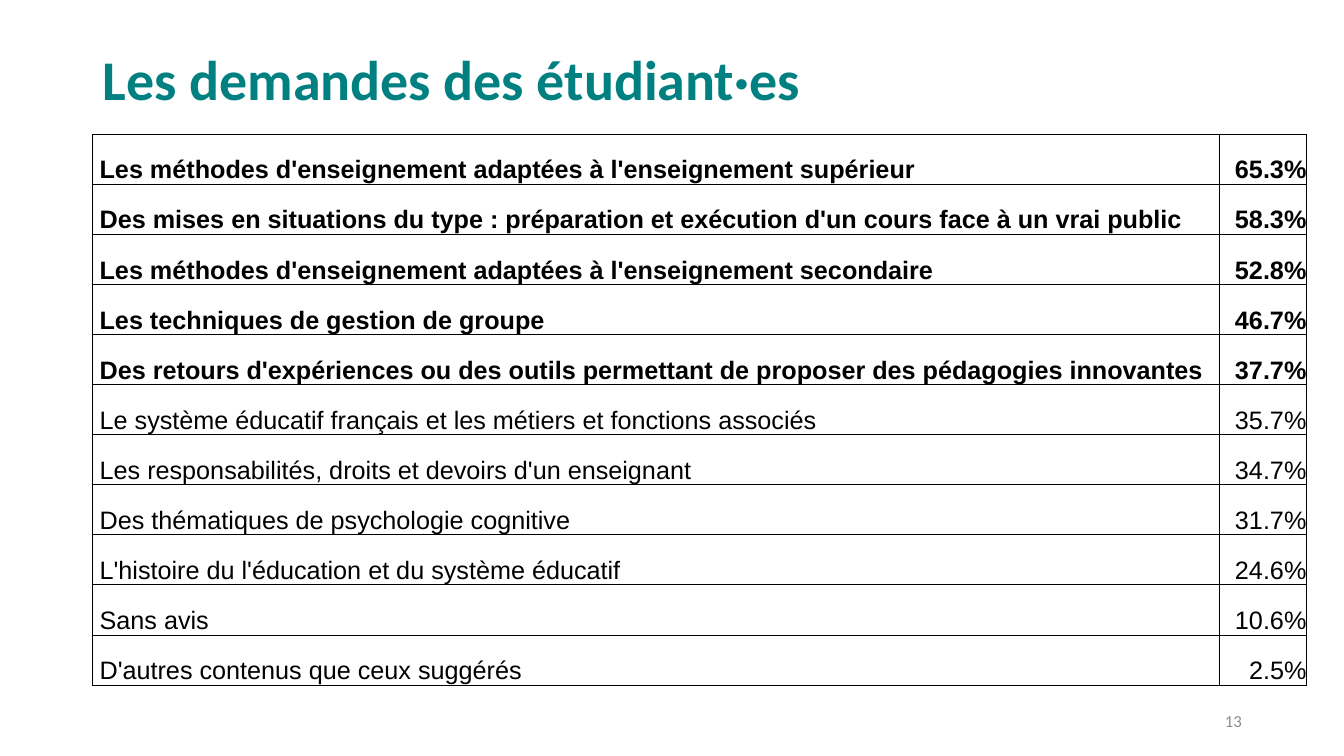
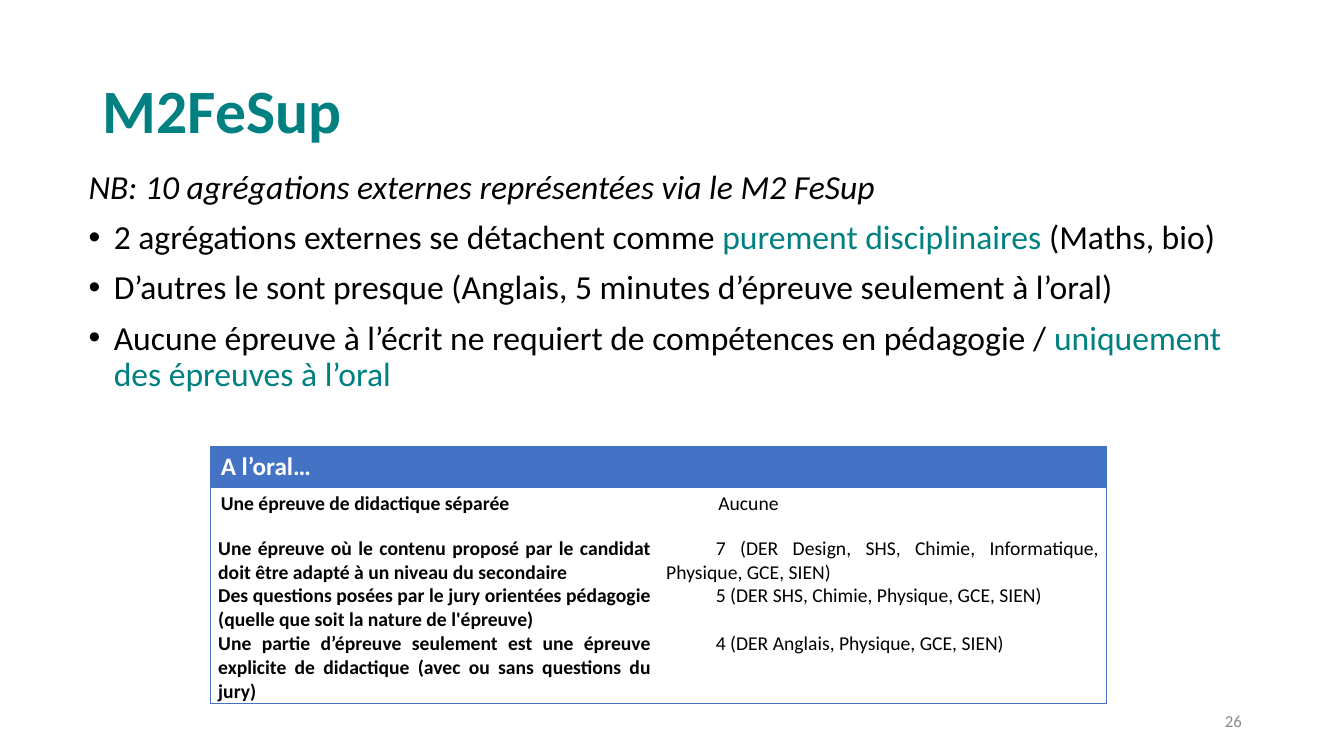
from dataclasses import dataclass

from lxml import etree
from pptx import Presentation
from pptx.dml.color import RGBColor
from pptx.enum.text import MSO_ANCHOR, MSO_AUTO_SIZE, PP_ALIGN
from pptx.oxml.ns import qn
from pptx.util import Pt

LEFT, RIGHT, JUSTIFY = PP_ALIGN.LEFT, PP_ALIGN.RIGHT, PP_ALIGN.JUSTIFY
TOP, MIDDLE, BOTTOM = MSO_ANCHOR.TOP, MSO_ANCHOR.MIDDLE, MSO_ANCHOR.BOTTOM
TITLE_ONLY = 5
COLORS = {
    "teal": "008080",
    "black": "000000",
    "white": "FFFFFF",
    "gray": "8C8C8C",
    "blue": "4472C4",
}


@dataclass(frozen=True)
class Span:
    text: str
    color: str = "black"


@dataclass(frozen=True)
class Para:
    spans: tuple[Span, ...]
    bullet: bool = True


@dataclass(frozen=True)
class Demand:
    label: str
    share: str
    bold: bool = False


@dataclass(frozen=True)
class Exam:
    label: str
    answer: str
    height: float


@dataclass(frozen=True)
class CellStyle:
    size: float
    font: str = "Calibri"
    color: str = "black"
    bold: bool = False
    align: PP_ALIGN = LEFT
    anchor: MSO_ANCHOR = TOP
    margins: tuple[float, float, float, float] = (7.2, 3.6, 7.2, 3.6)
    indent: float = 0
    fill: str = "white"
    line: str = "black"
    line_width: float = 0.5


DEMANDS = (
    Demand("Les méthodes d'enseignement adaptées à l'enseignement supérieur", "65.3%", True),
    Demand("Des mises en situations du type : préparation et exécution d'un cours face à un vrai public", "58.3%", True),
    Demand("Les méthodes d'enseignement adaptées à l'enseignement secondaire", "52.8%", True),
    Demand("Les techniques de gestion de groupe", "46.7%", True),
    Demand("Des retours d'expériences ou des outils permettant de proposer des pédagogies innovantes", "37.7%", True),
    Demand("Le système éducatif français et les métiers et fonctions associés", "35.7%"),
    Demand("Les responsabilités, droits et devoirs d'un enseignant", "34.7%"),
    Demand("Des thématiques de psychologie cognitive", "31.7%"),
    Demand("L'histoire du l'éducation et du système éducatif", "24.6%"),
    Demand("Sans avis", "10.6%"),
    Demand("D'autres contenus que ceux suggérés", "2.5%"),
)
NOTES = (
    Para((Span("NB: 10 agrégations externes représentées via le M2 FeSup"),), bullet=False),
    Para((
        Span("2 agrégations externes se détachent comme "),
        Span("purement disciplinaires ", "teal"),
        Span("(Maths, bio)"),
    )),
    Para((Span("D’autres le sont presque (Anglais, 5 minutes d’épreuve seulement à l’oral)"),)),
    Para((
        Span("Aucune épreuve à l’écrit ne requiert de compétences en pédagogie / "),
        Span("uniquement des épreuves à l’oral", "teal"),
    )),
)
EXAMS = (
    Exam("Une épreuve de didactique séparée", "Aucune", 35.3),
    Exam(
        "Une épreuve où le contenu proposé par le candidat doit être adapté à un niveau du secondaire",
        "7 (DER Design, SHS, Chimie, Informatique, Physique, GCE, SIEN)",
        34,
    ),
    Exam(
        "Des questions posées par le jury orientées pédagogie (quelle que soit la nature de l'épreuve)",
        "5 (DER SHS, Chimie, Physique, GCE, SIEN)",
        34,
    ),
    Exam(
        "Une partie d’épreuve seulement est une épreuve explicite de didactique (avec ou sans questions du jury)",
        "4 (DER Anglais, Physique, GCE, SIEN)",
        51,
    ),
)


def rgb(name: str) -> RGBColor:
    return RGBColor.from_string(COLORS[name])


def set_font(font, size: float, color: str, bold: bool = False, name: str = "Calibri") -> None:
    font.name, font.size, font.bold = name, Pt(size), bold
    font.color.rgb = rgb(color)


def set_indent(p, margin: float, indent: float) -> None:
    ppr = p._p.get_or_add_pPr()
    ppr.set("marL", str(Pt(margin)))
    ppr.set("indent", str(Pt(indent)))


def add_slide(prs, title: str, top: float, size: float, number: int):
    s = prs.slides.add_slide(prs.slide_layouts[TITLE_ONLY])
    sp = s.shapes.title
    sp.left, sp.top, sp.width, sp.height = Pt(66.2), Pt(top), Pt(828), Pt(104.4)
    tf = sp.text_frame
    tf.text = title
    tf.auto_size = MSO_AUTO_SIZE.NONE
    tf.vertical_anchor = MIDDLE
    p = tf.paragraphs[0]
    p.alignment, p.line_spacing = LEFT, 0.9
    set_font(p.font, size, "teal", True)

    tf = s.shapes.add_textbox(Pt(678.2), Pt(500.4), Pt(216), Pt(28.8)).text_frame
    tf.word_wrap = True
    tf.vertical_anchor = MIDDLE
    p = tf.paragraphs[0]
    p.text = str(number)
    p.alignment = RIGHT
    set_font(p.font, 12, "gray")
    return s


def add_notes_text(s, paras: tuple[Para, ...]) -> None:
    tf = s.shapes.add_textbox(Pt(56.2), Pt(118.1), Pt(828), Pt(342.7)).text_frame
    tf.word_wrap = True
    for i, para in enumerate(paras):
        p = tf.add_paragraph() if i else tf.paragraphs[0]
        p.line_spacing, p.space_before = 0.9, Pt(10)
        p.font.name, p.font.size = "Calibri", Pt(24)
        p.font.italic = not para.bullet
        if para.bullet:
            set_indent(p, 18, -18)
            ppr = p._p.get_or_add_pPr()
            bullet_font = etree.Element(qn("a:buFont"), typeface="Arial")
            bullet = etree.Element(qn("a:buChar"), char="•")
            ppr.find(qn("a:defRPr")).addprevious(bullet_font)
            bullet_font.addnext(bullet)
        for span in para.spans:
            r = p.add_run()
            r.text = span.text
            r.font.color.rgb = rgb(span.color)


def add_table(s, left: float, top: float, widths: list[float], heights: list[float]):
    table = s.shapes.add_table(
        len(heights), len(widths), Pt(left), Pt(top), Pt(sum(widths)), Pt(sum(heights))
    ).table
    table.first_row = table.horz_banding = False
    for column, width in zip(table.columns, widths):
        column.width = Pt(width)
    for row, height in zip(table.rows, heights):
        row.height = Pt(height)
    return table


def set_cell(cell, text: str, style: CellStyle, edges: str) -> None:
    cell.margin_left, cell.margin_top, cell.margin_right, cell.margin_bottom = map(Pt, style.margins)
    cell.vertical_anchor = style.anchor
    tcpr = cell._tc.get_or_add_tcPr()
    for side in "LRTB":
        ln = etree.SubElement(tcpr, qn(f"a:ln{side}"), w=str(Pt(style.line_width)))
        if side in edges:
            fill = etree.SubElement(ln, qn("a:solidFill"))
            etree.SubElement(fill, qn("a:srgbClr"), val=COLORS[style.line])
        else:
            etree.SubElement(ln, qn("a:noFill"))
    cell.fill.solid()
    cell.fill.fore_color.rgb = rgb(style.fill)
    p = cell.text_frame.paragraphs[0]
    p.text = text
    p.alignment = style.align
    set_indent(p, 0, style.indent)
    set_font(p.font, style.size, style.color, style.bold, style.font)


def add_demands_table(s) -> None:
    table = add_table(s, 66.2, 95.8, [805, 62], [35.8] * len(DEMANDS))
    for i, demand in enumerate(DEMANDS):
        columns = ((demand.label, LEFT, 5), (demand.share, RIGHT, 0))
        for j, (text, align, margin) in enumerate(columns):
            style = CellStyle(
                18, "Arial", bold=demand.bold, align=align, anchor=BOTTOM,
                margins=(margin, 0, 0, 0), line_width=0.75,
            )
            set_cell(table.cell(i, j), text, style, "LRTB")


def add_exams_table(s) -> None:
    table = add_table(s, 150.5, 319, [320, 320], [29] + [exam.height for exam in EXAMS])
    header = CellStyle(18, color="white", bold=True, fill="blue", line="blue")
    set_cell(table.cell(0, 0), "A l’oral…", header, "LTB")
    set_cell(table.cell(0, 1), "", header, "RTB")
    for i, exam in enumerate(EXAMS, 1):
        first = i == 1
        edge = ("T" if first else "") + ("B" if i == len(EXAMS) else "")
        for j, text in enumerate((exam.label, exam.answer)):
            style = CellStyle(
                14, bold=j == 0, align=LEFT if first else JUSTIFY,
                margins=(7.2, 3.6, 7.2, 3.6) if first else (5.4, 0, 5.4, 0),
                indent=35.4 * j, line="blue",
            )
            set_cell(table.cell(i, j), text, style, "LR"[j] + edge)


def main() -> None:
    prs = Presentation()
    prs.slide_width, prs.slide_height = Pt(960), Pt(540)
    add_demands_table(add_slide(prs, "Les demandes des étudiant·es", 6.5, 40, 13))
    s = add_slide(prs, "M2FeSup", 28.8, 44, 26)
    add_notes_text(s, NOTES)
    add_exams_table(s)
    prs.save("out.pptx")


if __name__ == "__main__":
    main()
